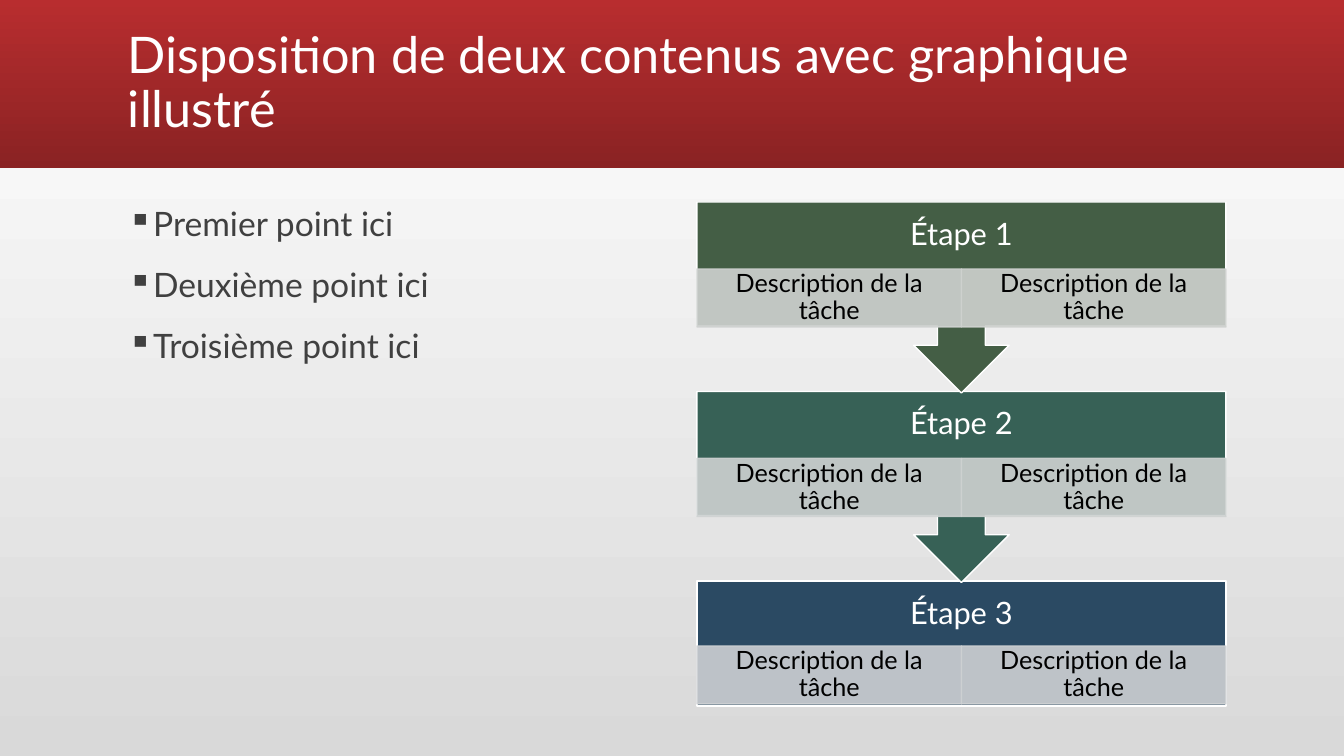
from lxml import etree
from pptx import Presentation
from pptx import util as u
from pptx.dml.color import RGBColor
from pptx.enum import shapes, text
from pptx.oxml.ns import qn

PX = 914400 / 100.8
SLIDE_W, SLIDE_H = 1344, 756
FONT = "Lato"

WHITE = RGBColor(0xFF, 0xFF, 0xFF)
BLACK = RGBColor(0, 0, 0)
GREY_TEXT = RGBColor(0x40, 0x40, 0x40)
BG_BOTTOM = RGBColor(0xD9, 0xD9, 0xD9)
RED = RGBColor(0xB8, 0x2D, 0x2F)
DARK_RED = RGBColor(0x8A, 0x22, 0x23)
GREEN = RGBColor(0x44, 0x5E, 0x45)
TEAL = RGBColor(0x37, 0x61, 0x56)
BLUE = RGBColor(0x2B, 0x4A, 0x63)
TINT_1A = RGBColor(0xCF, 0xD2, 0xD0)
TINT_1B = RGBColor(0xCF, 0xD2, 0xCF)
TINT_2A = RGBColor(0xCE, 0xD2, 0xD2)
TINT_2B = RGBColor(0xCE, 0xD2, 0xD1)
TINT_3A = RGBColor(0xCD, 0xD0, 0xD3)
TINT_3B = RGBColor(0xCE, 0xD1, 0xD3)

TASK = "Description de la tâche"
STEPS = [
    ("Étape\u00a01", GREEN, (TINT_1A, TINT_1B)),
    ("Étape\u00a02", TEAL, (TINT_2A, TINT_2B)),
    ("Étape\u00a03", BLUE, (TINT_3A, TINT_3B)),
]


def px(n):
    return u.Emu(round(n * PX))


def gradient(fill, first, last, angle):
    fill.gradient()
    fill.gradient_angle = angle
    for stop, color in zip(fill.gradient_stops, (first, last)):
        stop.color.rgb = color


def add_box(s, kind, box, fill=None, line=None, alpha=None):
    sp = s.shapes.add_shape(kind, *map(px, box))
    sp.shadow.inherit = False
    if fill is not None:
        sp.fill.solid()
        sp.fill.fore_color.rgb = fill
    if line is None:
        sp.line.fill.background()
    else:
        sp.line.color.rgb = line
        sp.line.width = u.Pt(1)
    if alpha:
        for clr in sp._element.spPr.iter(qn("a:srgbClr")):
            etree.SubElement(clr, qn("a:alpha"), val=str(alpha * 1000))
    return sp


def write(sp, lines, size, color, inset=(10, 5), align=text.PP_ALIGN.LEFT,
          anchor=text.MSO_ANCHOR.MIDDLE, before=0):
    tf = sp.text_frame
    side, top = map(px, inset)
    frame = dict(word_wrap=True, vertical_anchor=anchor, margin_left=side,
                 margin_right=side, margin_top=top, margin_bottom=top)
    for name, value in frame.items():
        setattr(tf, name, value)
    for i, line in enumerate(lines):
        p = tf.paragraphs[0] if i == 0 else tf.add_paragraph()
        for name, value in dict(alignment=align, line_spacing=0.9,
                                space_before=u.Pt(before)).items():
            setattr(p, name, value)
        r = p.add_run()
        r.text = line
        for name, value in dict(name=FONT, size=u.Pt(size)).items():
            setattr(r.font, name, value)
        r.font.color.rgb = color
    return tf


def add_title(s, box):
    """Red band with the slide title."""
    x, y, w, h = box
    band = add_box(s, shapes.MSO_SHAPE.RECTANGLE, box)
    gradient(band.fill, RED, DARK_RED, 270)
    tb = s.shapes.add_textbox(*map(px, (x + 118, y + 11, 1109, h - 22)))
    write(tb, ["Disposition de deux contenus avec graphique illustré"], 36, WHITE)


def add_points(s, box):
    """Bulleted list."""
    tb = s.shapes.add_textbox(*map(px, box))
    tf = write(tb, ["Premier point ici", "Deuxième point ici", "Troisième point ici"],
               24, GREY_TEXT, anchor=text.MSO_ANCHOR.TOP, before=18)
    for p in tf.paragraphs:
        pPr = p._p.get_or_add_pPr()
        pPr.set("marL", str(u.Inches(0.25)))
        pPr.set("indent", str(-u.Inches(0.25)))
        etree.SubElement(pPr, qn("a:buChar"), char="▪")


def add_step(s, box, head_h, kind, name, color, tints):
    """One step: its heading above two task cells."""
    x, y, w, h = box
    add_box(s, kind, box, color, WHITE)
    tb = s.shapes.add_textbox(*map(px, (x, y, w, 67)))
    write(tb, [name], 22, WHITE, (17, 17), text.PP_ALIGN.CENTER)
    cell_w = w / len(tints)
    for i, tint in enumerate(tints):
        cell = add_box(s, shapes.MSO_SHAPE.RECTANGLE,
                       (x + i * cell_w, y + head_h, cell_w, 58), tint, tint, 90)
        write(cell, [TASK], 18, BLACK, (14, 3), text.PP_ALIGN.CENTER)


def add_process(s, box):
    """Steps stacked downwards, the last one first so that arrows lie on top."""
    x, y, w, h = box
    last_h, arrow_h = 125, 191
    pitch = (h - last_h) / (len(STEPS) - 1)
    for i, step in reversed(list(enumerate(STEPS))):
        is_last = i == len(STEPS) - 1
        kind = (shapes.MSO_SHAPE.RECTANGLE if is_last
                else shapes.MSO_SHAPE.DOWN_ARROW_CALLOUT)
        step_box = (x, y + i * pitch, w, last_h if is_last else arrow_h)
        add_step(s, step_box, 65 if is_last else 67, kind, *step)


def main():
    prs = Presentation()
    prs.slide_width, prs.slide_height = px(SLIDE_W), px(SLIDE_H)
    s = prs.slides.add_slide(prs.slide_layouts[6])
    gradient(s.background.fill, BG_BOTTOM, WHITE, 90)
    add_title(s, (0, 0, SLIDE_W, 168))
    add_points(s, (118, 202, 529, 504))
    add_process(s, (697, 202, 529, 504))
    prs.save("out.pptx")


if __name__ == "__main__":
    main()
